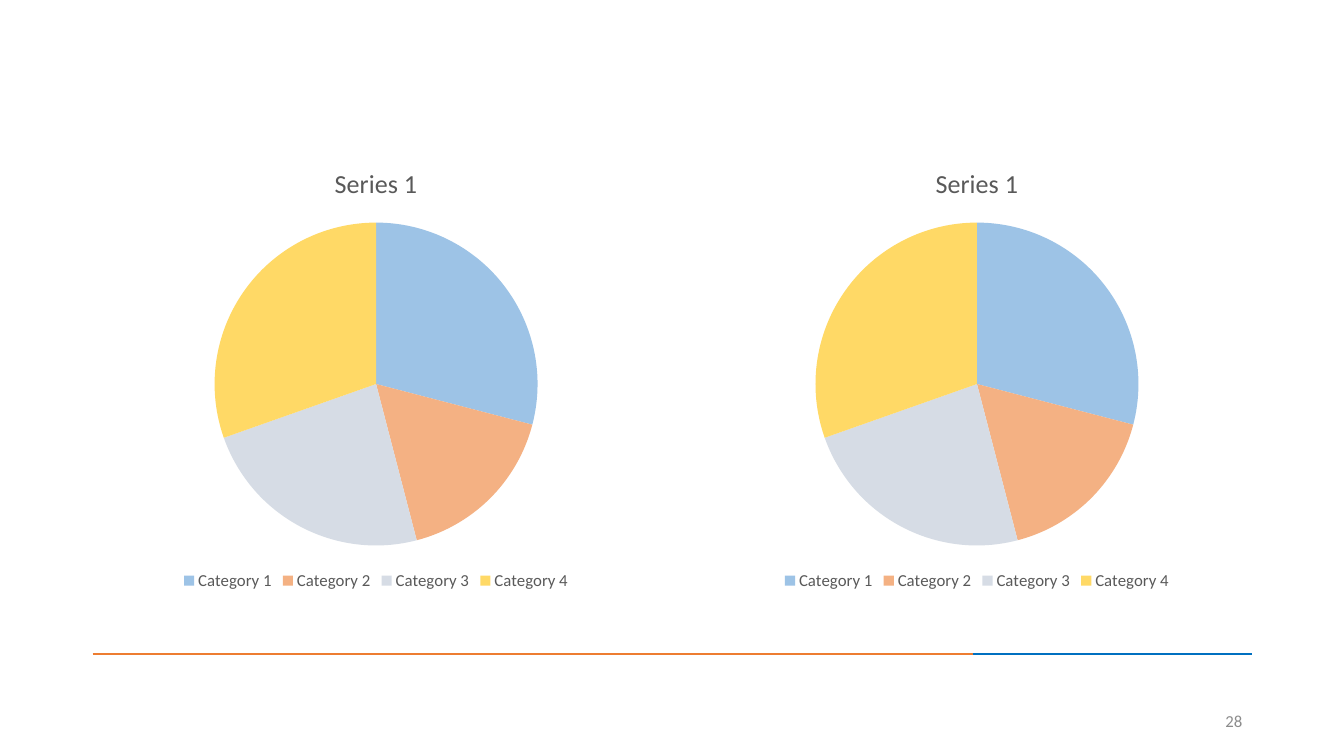
from lxml import etree
from pptx import Presentation
from pptx import util as u
from pptx.chart.data import CategoryChartData
from pptx.dml.color import RGBColor
from pptx.enum import chart as ch, shapes, text
from pptx.oxml.ns import qn

COLORS = {
    "orange": "ED7D31", "blue": "0070C0", "number": "8C8C8C", "label": "595959",
    "slice1": "9DC3E6", "slice2": "F4B183", "slice3": "D6DCE5", "slice4": "FFD966",
}
CATEGORIES = [f"Category {i}" for i in range(1, 5)]
SERIES = {
    "Series 1": (4.3, 2.5, 3.5, 4.5),
    "Series 2": (2.4, 4.4, 1.8, 2.8),
    "Series 3": (2, 2, 3, 5),
}


class SlideBuilder:
    font_name = "Calibri"

    def __init__(self, slide):
        self.s = slide

    def color(self, name):
        return RGBColor.from_string(COLORS[name])

    def style(self, font, size, color):
        font.name = self.font_name
        font.size = u.Pt(size)
        font.bold = False
        font.color.rgb = self.color(color)

    def rule(self, x1, x2, y, color):
        line = self.s.shapes.add_connector(
            shapes.MSO_CONNECTOR.STRAIGHT,
            u.Inches(x1), u.Inches(y), u.Inches(x2), u.Inches(y))
        line.line.color.rgb = self.color(color)
        line.line.width = u.Pt(1)
        etree.SubElement(line._element.spPr, qn("a:effectLst"))

    def page_number(self, number, x, y, w, h):
        sp = self.s.shapes.add_textbox(*map(u.Inches, (x, y, w, h)))
        tf = sp.text_frame
        tf.word_wrap = True
        tf.vertical_anchor = text.MSO_ANCHOR.MIDDLE
        tf.text = number
        p = tf.paragraphs[0]
        p.alignment = text.PP_ALIGN.RIGHT
        self.style(p.runs[0].font, 12, "number")

    def pie(self, title, x, y, w, h):
        data = CategoryChartData()
        data.categories = CATEGORIES
        for name, values in SERIES.items():
            data.add_series(name, values)
        chart = self.s.shapes.add_chart(
            ch.XL_CHART_TYPE.PIE, *map(u.Inches, (x, y, w, h)), data).chart
        chart.replace_data(data)
        self.style(chart.font, 10, "label")
        chart.has_title = True
        tf = chart.chart_title.text_frame
        tf.text = title
        self.style(tf.paragraphs[0].runs[0].font, 18.6, "label")
        chart.has_legend = True
        chart.legend.position = ch.XL_LEGEND_POSITION.BOTTOM
        chart.legend.include_in_layout = False
        self.style(chart.legend.font, 12, "label")
        plot = chart.plots[0]
        plot.vary_by_categories = True
        for i in range(len(CATEGORIES)):
            fill = plot.series[0].points[i].format.fill
            fill.solid()
            fill.fore_color.rgb = self.color(f"slice{i + 1}")


def main():
    prs = Presentation()
    prs.slide_width, prs.slide_height = u.Inches(13.33), u.Inches(7.5)
    b = SlideBuilder(prs.slides.add_slide(prs.slide_layouts[6]))
    b.rule(0.92, 9.66, 6.49, "orange")
    b.rule(9.65, 12.42, 6.49, "blue")
    b.page_number("28", 12, 6.95, 0.42, 0.4)
    for x in (0.92, 6.88):
        b.pie("Series 1", x, 1.45, 5.62, 4.45)
    prs.save("out.pptx")


if __name__ == "__main__":
    main()
